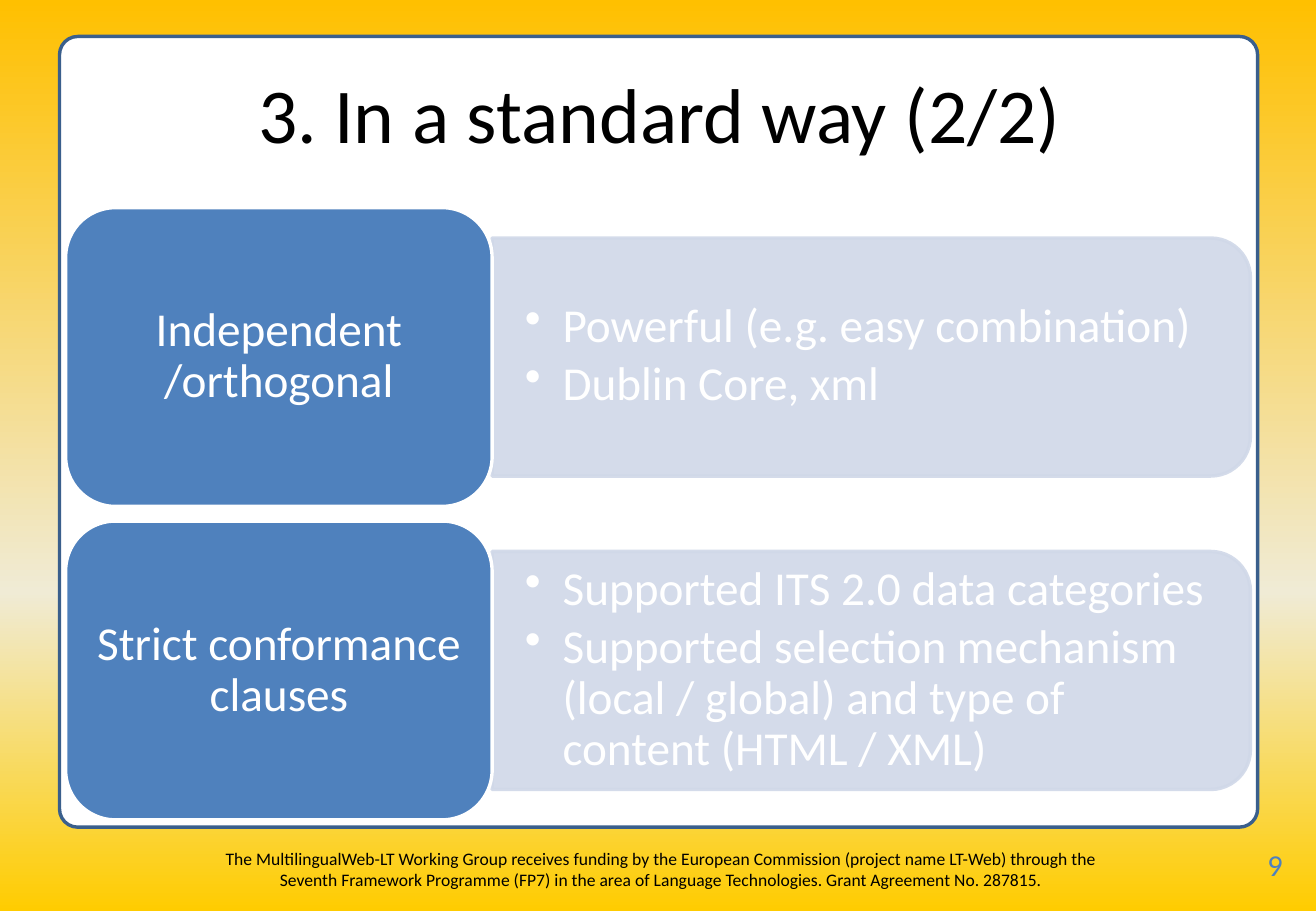
from copy import deepcopy

from lxml.etree import SubElement
from pptx import Presentation
from pptx.dml.color import RGBColor
from pptx.enum.shapes import MSO_SHAPE
from pptx.enum.text import MSO_ANCHOR, PP_ALIGN
from pptx.oxml.ns import qn
from pptx.util import Inches, Pt

FONT = "Calibri"
BLACK = RGBColor(0x00, 0x00, 0x00)
WHITE = RGBColor(0xFF, 0xFF, 0xFF)
BLUE = RGBColor(0x4F, 0x81, 0xBD)
FRAME_BLUE = RGBColor(0x3A, 0x5F, 0x8C)
PALE_BLUE = RGBColor(0xD0, 0xD8, 0xE8)
GRADIENT = [
    (0, RGBColor(0xFF, 0xC0, 0x00)),
    (0.65, RGBColor(0xF0, 0xEB, 0xD5)),
    (1, RGBColor(0xFF, 0xCC, 0x00)),
]
FUNDING = (
    "The MultilingualWeb-LT Working Group receives funding by the European Commission "
    "(project name LT-Web) through the Seventh Framework Programme (FP7) in the area of "
    "Language Technologies. Grant Agreement No. 287815."
)
ROWS = [
    ("Independent\n/orthogonal", ["Powerful (e.g. easy combination)", "Dublin Core, xml"]),
    (
        "Strict conformance clauses",
        [
            "Supported ITS 2.0 data categories",
            "Supported selection mechanism (local / global) and type of content (HTML / XML)",
        ],
    ),
]
ROW_TOP = 1.71
ROW_PITCH = 2.58
LABEL_LEFT, LABEL_WIDTH, LABEL_HEIGHT = 0.54, 3.51, 2.46
PANEL_LEFT, PANEL_WIDTH, PANEL_HEIGHT = 4.05, 6.24, 1.96


def paint_background(slide):
    """Fill the slide with the vertical yellow gradient."""
    fill = slide.background.fill
    fill.gradient()
    fill.gradient_angle = 270
    stops = slide.element.find(".//" + qn("a:gsLst"))
    stops.append(deepcopy(stops[0]))
    for stop, (position, color) in zip(fill.gradient_stops, GRADIENT):
        stop.position = position
        stop.color.rgb = color


def add_box(slide, kind, box, fill, line):
    """Add a filled preset shape with a 2 pt outline."""
    shape = slide.shapes.add_shape(kind, *map(Inches, box))
    shape.shadow.inherit = False
    shape.fill.solid()
    shape.fill.fore_color.rgb = fill
    shape.line.color.rgb = line
    shape.line.width = Pt(2)
    return shape


def set_frame(shape, horizontal, vertical, anchor):
    """Set wrapping, insets and anchor of a shape's text frame."""
    frame = shape.text_frame
    frame.word_wrap = True
    frame.margin_left = frame.margin_right = Inches(horizontal)
    frame.margin_top = frame.margin_bottom = Inches(vertical)
    frame.vertical_anchor = anchor
    return frame


def set_font(paragraph, size, color):
    """Set the font of a whole paragraph."""
    paragraph.font.name = FONT
    paragraph.font.size = Pt(size)
    paragraph.font.color.rgb = color


def add_text(slide, text, box, size, color, alignment, insets=(0.1, 0.05), anchor=MSO_ANCHOR.TOP):
    """Add a text box holding one paragraph."""
    shape = slide.shapes.add_textbox(*map(Inches, box))
    paragraph = set_frame(shape, *insets, anchor).paragraphs[0]
    paragraph.text = text
    paragraph.alignment = alignment
    set_font(paragraph, size, color)


def add_panel(slide, top):
    """Add the pale panel, turned so that its round corners face right."""
    left = PANEL_LEFT + (PANEL_WIDTH - PANEL_HEIGHT) / 2
    turned_top = top + (LABEL_HEIGHT - PANEL_WIDTH) / 2
    box = (left, turned_top, PANEL_HEIGHT, PANEL_WIDTH)
    panel = add_box(slide, MSO_SHAPE.ROUND_2_SAME_RECTANGLE, box, PALE_BLUE, PALE_BLUE)
    panel.rotation = 90
    for color in panel.element.spPr.iter(qn("a:srgbClr")):
        SubElement(color, qn("a:alpha"), val="90000")


def add_bullets(slide, top, bullets):
    """Add the bulleted text that lies on a panel."""
    box = (PANEL_LEFT, top + 0.34, 6.14, 1.77)
    shape = slide.shapes.add_textbox(*map(Inches, box))
    frame = set_frame(shape, 0.27, 0.14, MSO_ANCHOR.MIDDLE)
    for index, text in enumerate(bullets):
        paragraph = frame.add_paragraph() if index else frame.paragraphs[0]
        paragraph.text = text
        paragraph.line_spacing = 0.9
        paragraph.space_after = Pt(4)
        properties = paragraph._p.get_or_add_pPr()
        properties.set("marL", str(Inches(0.31)))
        properties.set("indent", str(Inches(-0.31)))
        SubElement(properties, qn("a:buChar"), char="•")
        set_font(paragraph, 28, WHITE)


def add_label(slide, top, text):
    """Add the blue label at the left of a row."""
    box = (LABEL_LEFT, top, LABEL_WIDTH, LABEL_HEIGHT)
    label = add_box(slide, MSO_SHAPE.ROUNDED_RECTANGLE, box, BLUE, WHITE)
    paragraph = set_frame(label, 0.12, 0.06, MSO_ANCHOR.MIDDLE).paragraphs[0]
    paragraph.text = text
    paragraph.alignment = PP_ALIGN.CENTER
    paragraph.line_spacing = 0.9
    set_font(paragraph, 28, WHITE)


def main():
    """Build the slide and save it."""
    presentation = Presentation()
    presentation.slide_width = Inches(10.83)
    presentation.slide_height = Inches(7.5)
    slide = presentation.slides.add_slide(presentation.slide_layouts[6])
    paint_background(slide)
    card = add_box(slide, MSO_SHAPE.ROUNDED_RECTANGLE, (0.49, 0.3, 9.86, 6.51), WHITE, FRAME_BLUE)
    card.adjustments[0] = 0.023
    add_text(slide, FUNDING, (1.62, 6.93, 7.64, 0.4), 10.4, BLACK, PP_ALIGN.CENTER)
    add_text(
        slide, "3. In a standard way (2/2)", (0.51, 0.3, 9.83, 1.25), 46, BLACK,
        PP_ALIGN.CENTER, anchor=MSO_ANCHOR.MIDDLE,
    )
    for index, (label, bullets) in enumerate(ROWS):
        top = ROW_TOP + index * ROW_PITCH
        add_panel(slide, top)
        add_bullets(slide, top, bullets)
        add_label(slide, top, label)
    add_text(slide, "9", (10.41, 6.96, 0.42, 0.4), 18, BLUE, PP_ALIGN.LEFT, insets=(0.02, 0.01))
    presentation.save("out.pptx")


if __name__ == "__main__":
    main()
